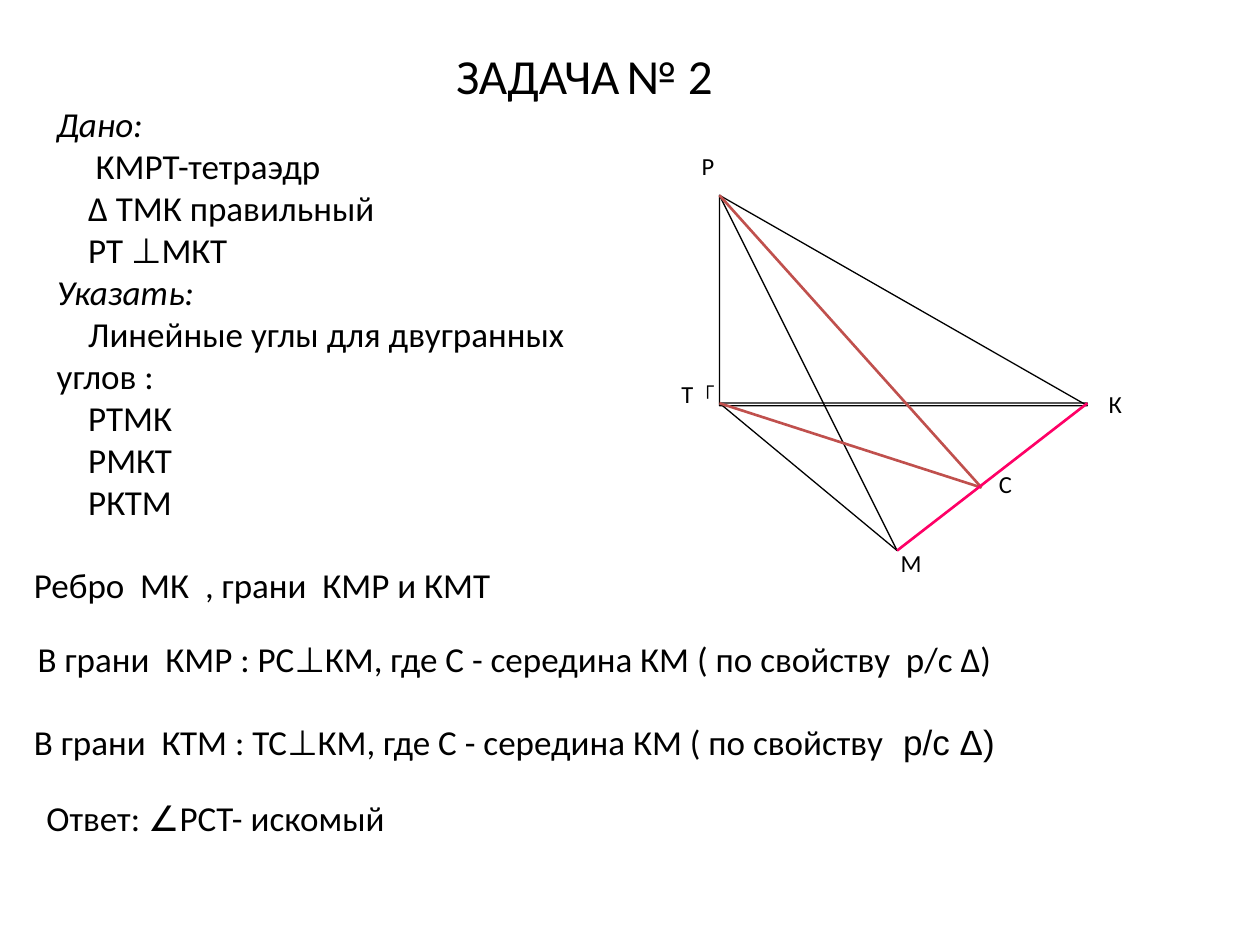
from pptx import Presentation
from pptx.dml.color import RGBColor
from pptx.enum.shapes import MSO_CONNECTOR, MSO_SHAPE
from pptx.enum.text import MSO_ANCHOR, MSO_AUTO_SIZE, PP_ALIGN
from pptx.oxml.ns import qn
from pptx.util import Inches, Pt
from lxml.etree import SubElement

BLACK, RED, PINK = "000000", "C0504D", "FF0066"
INDENT = 0.25

P, T, K = (5.71, 1.55), (5.71, 3.2), (8.63, 3.2)
M, C = (7.12, 4.37), (7.79, 3.87)

GIVEN = [
    ("Дано:", 0),
    ("КМРТ-тетраэдр", INDENT + 0.06),
    ("Δ ТМК правильный", INDENT),
    ("РТ ⊥МКТ", INDENT),
    ("Указать:", 0),
    ("Линейные углы для двугранных углов :", INDENT),
    ("РТМК", INDENT),
    ("РМКТ", INDENT),
    ("РКТМ", INDENT),
]

VERTEX_LABELS = [
    ("Т", 5.31, 2.96),
    ("Р", 5.47, 1.15),
    ("M", 7.05, 4.3),
    ("К", 8.7, 3.04),
    ("C", 7.83, 3.67),
    ("┌", 5.47, 2.88),
]

SOLUTION = [
    ("Ребро  МК  , грани  КМР и КМТ", 0.17, 4.42, 4.09),
    ("В грани  КМР : РС⊥КМ, где С - середина КМ ( по свойству  р/с Δ)", 0.2, 5.01, 8.12),
    ("В грани  КТМ : ТС⊥КМ, где С - середина КМ ( по свойству", 0.17, 5.67, 8.12),
    ("Ответ: ∠РСТ- искомый", 0.27, 6.27, 3.04),
]


def rgb(color):
    return RGBColor.from_string(color)


def add_text(paragraph, text, size=20, font="Calibri", color=BLACK, italic=False):
    run = paragraph.add_run()
    run.text = text
    run.font.size = Pt(size)
    run.font.name = font
    run.font.color.rgb = rgb(color)
    run.font.italic = italic


def place(holder, left, top, width, height, wrap=True):
    """Position a text holder and give its frame fixed, top-anchored settings."""
    holder.left, holder.top = Inches(left), Inches(top)
    holder.width, holder.height = Inches(width), Inches(height)
    frame = holder.text_frame
    frame.word_wrap = wrap
    frame.auto_size = MSO_AUTO_SIZE.NONE
    frame.vertical_anchor = MSO_ANCHOR.TOP
    return frame


def fill_title(title):
    heading = place(title, 3.52, 0.31, 2.33, 0.57).paragraphs[0]
    heading.alignment = PP_ALIGN.LEFT
    add_text(heading, "ЗАДАЧА", size=28)
    add_text(heading, " ", size=18)
    add_text(heading, "№ 2", size=28)


def fill_given(body):
    frame = place(body, 0.35, 0.76, 4.25, 3.72)
    for index, (text, indent) in enumerate(GIVEN):
        line = frame.add_paragraph() if index else frame.paragraphs[0]
        line.space_before = Pt(0)
        props = line._p.get_or_add_pPr()
        props.set("marL", "0")
        props.set("indent", str(Inches(indent)))
        SubElement(props, qn("a:buNone"))
        add_text(line, text, italic=not indent)


def add_line_of_text(slide, text, left, top, width, height, size):
    box = slide.shapes.add_textbox(0, 0, 0, 0)
    paragraph = place(box, left, top, width, height, wrap=False).paragraphs[0]
    add_text(paragraph, text, size=size)
    return paragraph


def add_face(slide, preset, left, top, width, height):
    face = slide.shapes.add_shape(
        preset, Inches(left), Inches(top), Inches(width), Inches(height))
    face.shadow.inherit = False
    face.fill.background()
    face.line.color.rgb = rgb(BLACK)
    face.line.width = Pt(0.75)
    return face


def add_edge(slide, start, end, color, width=1.5):
    edge = slide.shapes.add_connector(
        MSO_CONNECTOR.STRAIGHT, *(Inches(value) for value in start + end))
    edge.line.color.rgb = rgb(color)
    edge.line.width = Pt(width)
    SubElement(edge._element.spPr, qn("a:effectLst"))


def draw_tetrahedron(slide):
    base_width = K[0] - T[0]
    base = add_face(slide, MSO_SHAPE.ISOSCELES_TRIANGLE, *T, base_width, M[1] - T[1])
    base.adjustments[0] = (M[0] - T[0]) / base_width
    base._element.spPr.xfrm.set("flipV", "1")
    add_face(slide, MSO_SHAPE.RIGHT_TRIANGLE, *P, base_width, 1.67)
    add_edge(slide, P, M, BLACK, width=0.75)
    add_edge(slide, T, C, RED)
    add_edge(slide, P, C, RED)
    add_edge(slide, K, M, PINK)
    for text, left, top in VERTEX_LABELS:
        add_line_of_text(slide, text, left, top, 0.33, 0.33, size=14)


def write_solution(slide):
    steps = [add_line_of_text(slide, *step, 0.43, size=20) for step in SOLUTION]
    add_text(steps[2], "  р/с Δ)", font="Arial")


def main():
    deck = Presentation()
    deck.slide_width, deck.slide_height = Inches(10), Inches(7.5)
    slide = deck.slides.add_slide(deck.slide_layouts[1])
    fill_title(slide.shapes.title)
    fill_given(slide.placeholders[1])
    draw_tetrahedron(slide)
    write_solution(slide)
    deck.save("out.pptx")


if __name__ == "__main__":
    main()
